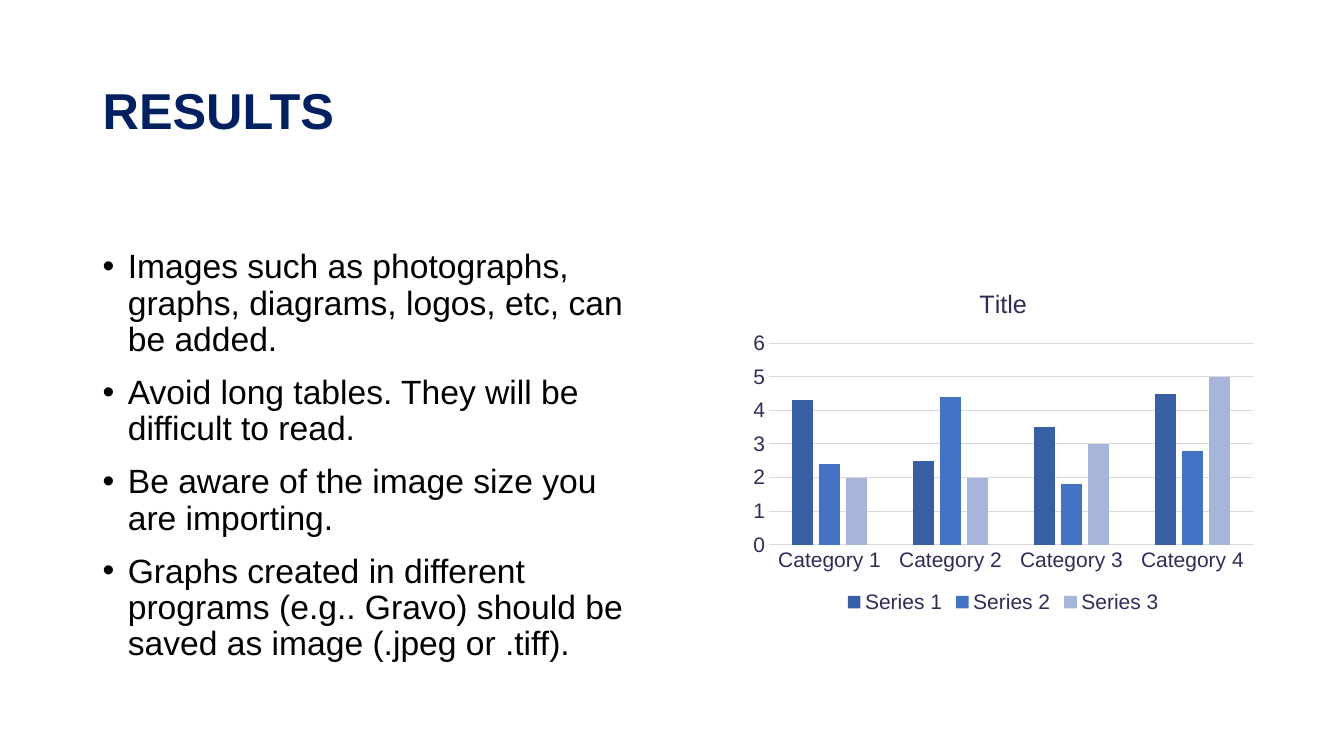
from lxml.etree import SubElement
from pptx import Presentation
from pptx.chart.data import CategoryChartData as ChartData
from pptx.dml.color import RGBColor
from pptx.enum.chart import XL_CHART_TYPE as Kind, XL_LEGEND_POSITION as Place, XL_TICK_MARK as Tick
from pptx.enum.text import MSO_ANCHOR as Anchor
from pptx.oxml.ns import qn
from pptx.util import Inches, Pt

HEAD = "RESULTS"
POINTS = [
    "Images such as photographs, graphs, diagrams, logos, etc, can be added.",
    "Avoid long tables. They will be difficult to read.",
    "Be aware of the image size you are importing.",
    "Graphs created in different programs (e.g.. Gravo) should be saved as image (.jpeg or .tiff).",
]
TITLE = "Title"
CATS = ["Category 1", "Category 2", "Category 3", "Category 4"]
SERIES = [
    ("Series 1", (4.3, 2.5, 3.5, 4.5), "385FA3"),
    ("Series 2", (2.4, 4.4, 1.8, 2.8), "4472C4"),
    ("Series 3", (2, 2, 3, 5), "A8B5DB"),
]
PLOT = {"x": 0.05, "y": 0.21, "w": 0.93, "h": 0.58}
INK, GRID = "2F2D55", "D9D9D9"


def color(code):
    return RGBColor.from_string(code)


def style(font, size, code, bold=False):
    font.name, font.size, font.bold = "Arial", Pt(size), bold
    font.color.rgb = color(code)


def rule(line):
    line.color.rgb = color(GRID)
    line.width = Pt(0.75)


def add_bullet(para):
    props = para._p.get_or_add_pPr()
    props.set("marL", str(Inches(0.25)))
    props.set("indent", str(-Inches(0.25)))
    SubElement(props, qn("a:buFont"), typeface="Arial")
    SubElement(props, qn("a:buChar"), char="•")


def add_text(slide, lines, box, size, code, bold=False, bullet=False, gap=0, anchor=Anchor.TOP):
    frame = slide.shapes.add_textbox(*map(Inches, box)).text_frame
    frame.word_wrap = True
    frame.vertical_anchor = anchor
    for i, line in enumerate(lines):
        para = frame.add_paragraph() if i else frame.paragraphs[0]
        para.line_spacing = 0.9
        if i:
            para.space_before = Pt(gap)
        if bullet:
            add_bullet(para)
        run = para.add_run()
        run.text = line
        style(run.font, size, code, bold)


def add_bars(slide, box):
    data = ChartData()
    data.categories = CATS
    for name, vals, _ in SERIES:
        data.add_series(name, vals)
    chart = slide.shapes.add_chart(Kind.COLUMN_CLUSTERED, *map(Inches, box), data).chart
    style(chart.font, 15, INK)

    chart.has_title = True
    title = chart.chart_title
    title.include_in_layout = False
    title.text_frame.text = TITLE
    style(title.text_frame.paragraphs[0].runs[0].font, 18, INK)

    chart.has_legend = True
    chart.legend.position = Place.BOTTOM
    chart.legend.include_in_layout = False
    style(chart.legend.font, 15, INK)

    for axis in (chart.category_axis, chart.value_axis):
        axis.major_tick_mark = axis.minor_tick_mark = Tick.NONE
        style(axis.tick_labels.font, 15, INK)
    rule(chart.category_axis.format.line)
    scale = chart.value_axis
    scale.minimum_scale, scale.maximum_scale, scale.major_unit = 0, 6, 1
    scale.format.line.fill.background()
    rule(scale.major_gridlines.format.line)

    plot = chart.plots[0]
    plot.gap_width, plot.overlap, plot.vary_by_categories = 219, -27, False
    for bars, (_, _, code) in zip(plot.series, SERIES):
        bars.format.fill.solid()
        bars.format.fill.fore_color.rgb = color(code)

    area = chart._chartSpace.chart.plotArea
    layout = area.find(qn("c:layout"))
    if layout is None:
        layout = SubElement(area, qn("c:layout"))
        area.insert(0, layout)
    manual = SubElement(layout, qn("c:manualLayout"))
    SubElement(manual, qn("c:layoutTarget"), val="inner")
    for side in "xy":
        SubElement(manual, qn(f"c:{side}Mode"), val="edge")
    for key, part in PLOT.items():
        SubElement(manual, qn(f"c:{key}"), val=str(part))


def main():
    deck = Presentation()
    deck.slide_width, deck.slide_height = Inches(13.33), Inches(7.5)
    slide = deck.slides.add_slide(deck.slide_layouts[6])
    add_text(slide, [HEAD], (0.92, 0.4, 11.5, 1.45), 36, "002060", bold=True, anchor=Anchor.MIDDLE)
    add_text(slide, POINTS, (0.92, 2.43, 5.64, 4.47), 24, "000000", bullet=True, gap=12)
    add_bars(slide, (7.37, 2.68, 5.16, 3.45))
    deck.save("out.pptx")


if __name__ == "__main__":
    main()
